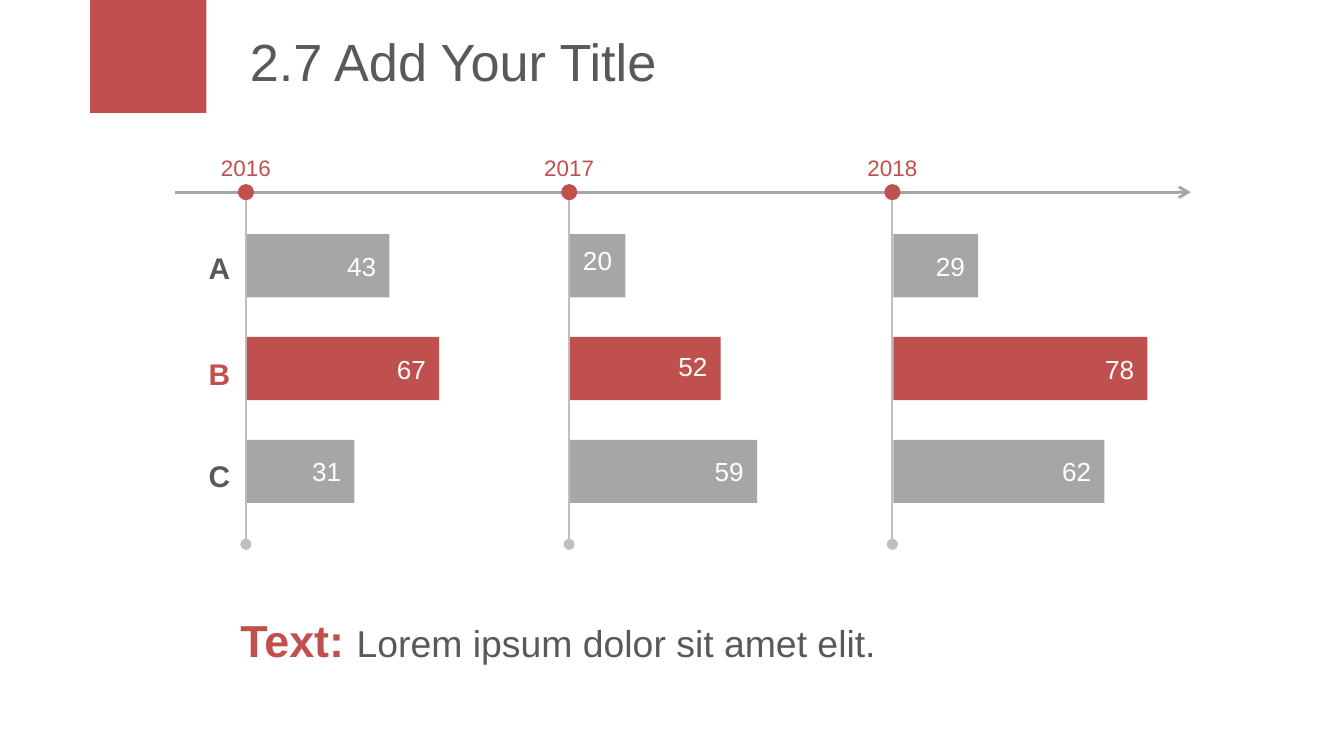
from dataclasses import dataclass
from typing import Any

from lxml.etree import SubElement
from pptx import Presentation
from pptx.dml.color import RGBColor
from pptx.enum.shapes import MSO_CONNECTOR as Connector, MSO_SHAPE as Preset
from pptx.enum.text import MSO_ANCHOR as Anchor, MSO_AUTO_SIZE as AutoSize, PP_ALIGN as Align
from pptx.oxml.ns import qn
from pptx.util import Inches, Pt

RED, DARK, GREY, PALE, WHITE = "C0504D", "595959", "A6A6A6", "BFBFBF", "FFFFFF"
GRID = 0.1
SLIDE_COLUMNS, SLIDE_ROWS = 100, 56.25
AXIS_ROW, AXIS_END_ROW, DOT = 14.3, 40.5, 1.2
FIRST_YEAR, YEAR_STEP = 18.3, 24.05
FIRST_BAR, BAR_STEP, BAR_HEIGHT = 17.43, 7.65, 4.7


@dataclass(frozen=True)
class Area:
    """A box in columns and rows of the slide grid."""
    column: float
    row: float
    columns: float
    rows: float

    def lengths(self) -> list[int]:
        """Return left, top, width and height as slide lengths."""
        return [grid(n) for n in (self.column, self.row, self.columns, self.rows)]


@dataclass(frozen=True)
class Run:
    """A piece of text with one format."""
    text: str
    size: float
    color: str
    bold: bool = False


@dataclass(frozen=True)
class Bar:
    """A value, its bar length in columns and the row shift of its label."""
    value: int
    columns: float
    label_shift: float = 0


@dataclass(frozen=True)
class Category:
    """A bar row with its letter, colours and the row of the letter."""
    letter: str
    letter_color: str
    bar_color: str
    letter_row: float


@dataclass(frozen=True)
class Year:
    """A point on the timeline with one bar per category."""
    name: str
    bars: tuple[Bar, ...]


CATEGORIES = (
    Category("A", DARK, GREY, 18.1),
    Category("B", RED, RED, 26),
    Category("C", DARK, GREY, 33.6),
)
YEARS = (
    Year("2016", (Bar(43, 10.6), Bar(67, 14.3), Bar(31, 8))),
    Year("2017", (Bar(20, 4.1, -0.4), Bar(52, 11.2, -0.2), Bar(59, 13.9))),
    Year("2018", (Bar(29, 6.3), Bar(78, 18.9), Bar(62, 15.7))),
)


def grid(cells: float) -> int:
    """Turn a number of grid cells into a length."""
    return Inches(cells * GRID)


def rgb(color: str) -> RGBColor:
    """Turn a hex string into a colour."""
    return RGBColor.from_string(color)


def apply(target: Any, values: dict[str, Any]) -> None:
    """Set each named format value on the target."""
    for name, value in values.items():
        setattr(target, name, value)


def write(paragraph: Any, runs: tuple[Run, ...], **layout: Any) -> None:
    """Fill a paragraph with formatted runs."""
    apply(paragraph, layout)
    for part in runs:
        run = paragraph.add_run()
        run.text = part.text
        apply(run.font, {"name": "Arial", "size": Pt(part.size), "bold": part.bold})
        run.font.color.rgb = rgb(part.color)


def add_text(shapes: Any, area: Area, *runs: Run, wrap: bool = True, **layout: Any) -> None:
    """Add a growing text box."""
    frame = shapes.add_textbox(*area.lengths()).text_frame
    apply(frame, {"word_wrap": wrap, "auto_size": AutoSize.SHAPE_TO_FIT_TEXT})
    write(frame.paragraphs[0], runs, **layout)


def add_block(shapes: Any, preset: Preset, area: Area, color: str) -> None:
    """Add a flat filled shape without outline."""
    block = shapes.add_shape(preset, *area.lengths())
    block.shadow.inherit = False
    block.fill.solid()
    block.fill.fore_color.rgb = rgb(color)
    block.line.fill.background()


def add_line(shapes: Any, start: tuple[float, float], end: tuple[float, float],
             color: str, width: float, tip: str) -> None:
    """Add a straight line with a tip at its end."""
    points = [grid(n) for n in (*start, *end)]
    line = shapes.add_connector(Connector.STRAIGHT, *points)
    line.line.color.rgb = rgb(color)
    line.line.width = Pt(width)
    properties = line._element.spPr
    SubElement(properties.find(qn("a:ln")), qn("a:tailEnd"), type=tip)
    SubElement(properties, qn("a:effectLst"))


def add_bars(shapes: Any, year: Year, axis: float) -> None:
    """Add the grouped bars and value labels of one year."""
    group = shapes.add_group_shape().shapes
    for index, (bar, category) in enumerate(zip(year.bars, CATEGORIES)):
        top = FIRST_BAR + index * BAR_STEP
        add_block(group, Preset.RECTANGLE, Area(axis, top, bar.columns, BAR_HEIGHT),
                  category.bar_color)
        label_columns = 4.7 if bar.columns < 7 else 6.3
        label = Area(axis + bar.columns - label_columns, top + 0.7 + bar.label_shift,
                     label_columns, 3.4)
        add_text(group, label, Run(str(bar.value), 14, WHITE), alignment=Align.RIGHT)


def add_year(shapes: Any, year: Year, axis: float) -> None:
    """Add the name, dot, axis and bars of one year."""
    add_text(shapes, Area(axis - 2.85, 10, 5.7, 3.7), Run(year.name, 12, RED),
             wrap=False, alignment=Align.CENTER, line_spacing=1.5)
    add_block(shapes, Preset.OVAL, Area(axis - DOT / 2, AXIS_ROW - DOT / 2, DOT, DOT), RED)
    add_line(shapes, (axis, AXIS_ROW + DOT / 2), (axis, AXIS_END_ROW), PALE, 1, "oval")
    add_bars(shapes, year, axis + 0.08)


def add_title(title: Any) -> None:
    """Place and format the title placeholder."""
    apply(title, dict(zip(("left", "top", "width", "height"),
                          Area(17.6, 1.35, 78.9, 6.3).lengths())))
    apply(title.text_frame, {"vertical_anchor": Anchor.MIDDLE, "word_wrap": True})
    write(title.text_frame.paragraphs[0], (Run("2.7 Add Your Title", 28, DARK),),
          alignment=Align.LEFT)


def main() -> None:
    """Build and save the slide."""
    deck = Presentation()
    apply(deck, {"slide_width": grid(SLIDE_COLUMNS), "slide_height": grid(SLIDE_ROWS)})
    shapes = deck.slides.add_slide(deck.slide_layouts[5]).shapes
    add_title(shapes.title)
    add_block(shapes, Preset.RECTANGLE, Area(6.7, 0, 8.65, 8.4), RED)
    add_text(shapes, Area(16.9, 43.1, 68.5, 6.3), Run("Text: ", 24, RED, True),
             Run("Lorem ipsum dolor sit amet elit.", 20, DARK), line_spacing=1.5)
    add_line(shapes, (13, AXIS_ROW), (88.6, AXIS_ROW), GREY, 1.5, "arrow")
    for index, year in enumerate(YEARS):
        add_year(shapes, year, FIRST_YEAR + index * YEAR_STEP)
    for category in CATEGORIES:
        add_text(shapes, Area(10.6, category.letter_row, 7.5, 3.7),
                 Run(category.letter, 16, category.letter_color, True), alignment=Align.RIGHT)
    deck.save("out.pptx")


if __name__ == "__main__":
    main()
